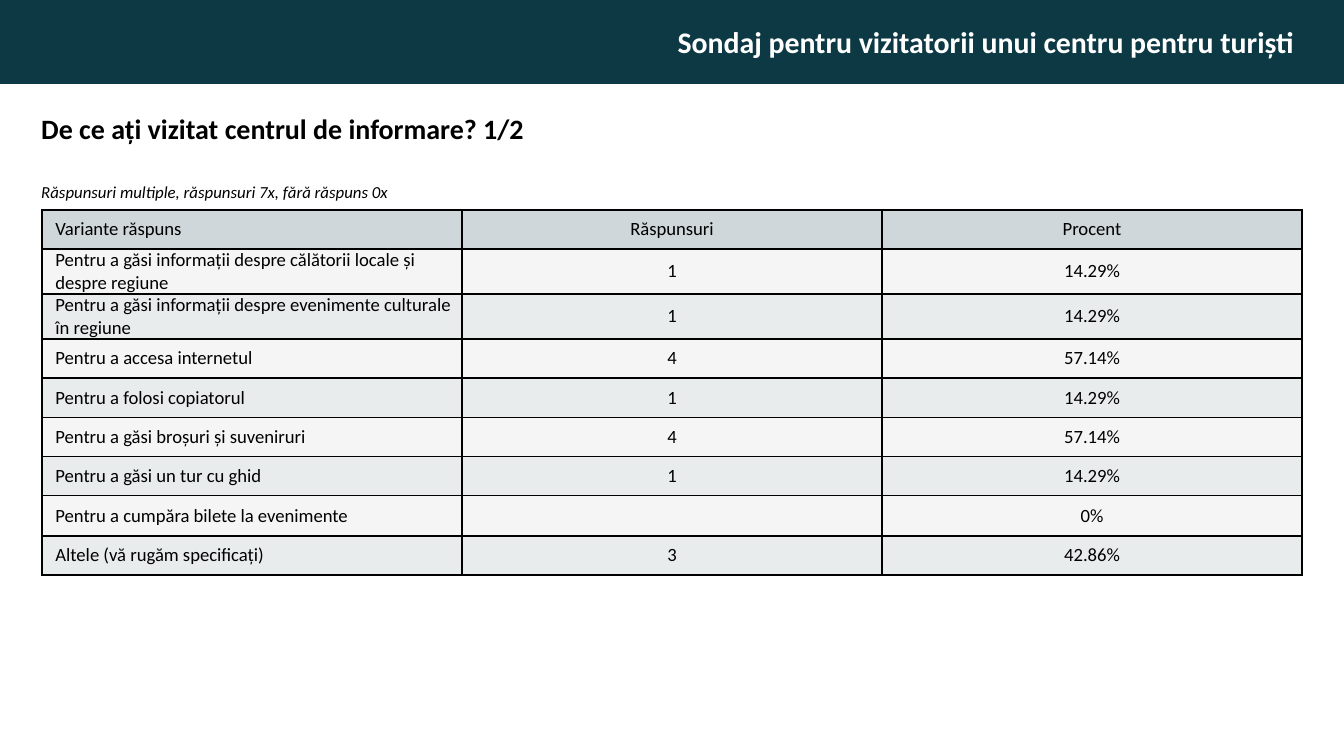
from lxml.etree import SubElement
from pptx import Presentation
from pptx.dml.color import RGBColor
from pptx.enum.shapes import MSO_SHAPE as Shape
from pptx.enum.text import MSO_ANCHOR as Anchor, PP_ALIGN as Align
from pptx.oxml.ns import qn
from pptx.util import Pt

FONT = "Calibri"
COLORS = {
    "banner": "0D3944",
    "white": "FFFFFF",
    "black": "000000",
    "header": "CFD7DA",
    "odd": "F5F5F5",
    "even": "E8ECED",
}
HEADINGS = ("Variante răspuns", "Răspunsuri", "Procent")
ANSWERS = [
    ("Pentru a găsi informații despre călătorii locale și despre regiune", "1", "14.29%"),
    ("Pentru a găsi informații despre evenimente culturale în regiune", "1", "14.29%"),
    ("Pentru a accesa internetul", "4", "57.14%"),
    ("Pentru a folosi copiatorul", "1", "14.29%"),
    ("Pentru a găsi broșuri și suveniruri", "4", "57.14%"),
    ("Pentru a găsi un tur cu ghid", "1", "14.29%"),
    ("Pentru a cumpăra bilete la evenimente", "", "0%"),
    ("Altele (vă rugăm specificați)", "3", "42.86%"),
]
COLUMN_WIDTH, ROW_HEIGHT = 225, 21
CELL_INDENT = 3.6


def color(name):
    return RGBColor.from_string(COLORS[name])


def paint(item, name):
    item.fill.solid()
    item.fill.fore_color.rgb = color(name)


def add_span(para, text, size, ink="black", bold=False, italic=False):
    span = para.add_run()
    span.text = text
    font = span.font
    font.name, font.size = FONT, Pt(size)
    font.bold, font.italic = bold, italic
    font.color.rgb = color(ink)


def add_banner(page, text):
    banner = page.shapes.add_shape(Shape.RECTANGLE, 0, 0, Pt(720), Pt(45))
    banner.shadow.inherit = False
    banner.line.fill.background()
    paint(banner, "banner")
    frame = banner.text_frame
    frame.vertical_anchor = Anchor.MIDDLE
    frame.margin_right = Pt(26.5)
    para = frame.paragraphs[0]
    para.alignment = Align.RIGHT
    add_span(para, text, 16, "white", bold=True)


def add_label(page, text, top, width, height, size, **style):
    box = page.shapes.add_textbox(Pt(15), Pt(top), Pt(width), Pt(height))
    box.text_frame.word_wrap = True
    add_span(box.text_frame.paragraphs[0], text, size, **style)


def add_borders(cell):
    # Border lines must come before the fill in the cell properties
    props = cell._tc.get_or_add_tcPr()
    for side in ("a:lnL", "a:lnR", "a:lnT", "a:lnB"):
        line = SubElement(props, qn(side), w=str(Pt(1)))
        fill = SubElement(line, qn("a:solidFill"))
        SubElement(fill, qn("a:srgbClr"), val=COLORS["black"])


def fill_cell(cell, text, is_label, shade):
    add_borders(cell)
    paint(cell, shade)
    cell.vertical_anchor = Anchor.MIDDLE
    cell.margin_left = Pt(CELL_INDENT if is_label else 0)
    cell.margin_top = cell.margin_right = cell.margin_bottom = 0
    para = cell.text_frame.paragraphs[0]
    if is_label:
        para._p.get_or_add_pPr().set("marL", str(Pt(CELL_INDENT)))
    else:
        para.alignment = Align.CENTER
    add_span(para, text, 10)


def add_answer_table(page):
    rows = [HEADINGS, *ANSWERS]
    frame = page.shapes.add_table(
        len(rows), len(HEADINGS), Pt(22.5), Pt(112.5),
        Pt(COLUMN_WIDTH * len(HEADINGS)), Pt(ROW_HEIGHT * len(rows)))
    table = frame.table
    for column in table.columns:
        column.width = Pt(COLUMN_WIDTH)
    for r, texts in enumerate(rows):
        table.rows[r].height = Pt(ROW_HEIGHT)
        shade = "header" if r == 0 else "odd" if r % 2 else "even"
        for c, text in enumerate(texts):
            fill_cell(table.cell(r, c), text, c == 0, shade)


def main():
    deck = Presentation()
    deck.slide_width, deck.slide_height = Pt(720), Pt(405)
    page = deck.slides.add_slide(deck.slide_layouts[6])

    # Survey title
    add_banner(page, "Sondaj pentru vizitatorii unui centru pentru turiști")

    # Response summary and answers
    add_label(page, "Răspunsuri multiple, răspunsuri 7x, fără răspuns 0x",
              93.75, 300, 45, 9, italic=True)
    add_answer_table(page)

    # Question
    add_label(page, "De ce ați vizitat centrul de informare? 1/2",
              56.25, 690, 37.5, 15, bold=True)

    deck.save("out.pptx")


if __name__ == "__main__":
    main()
